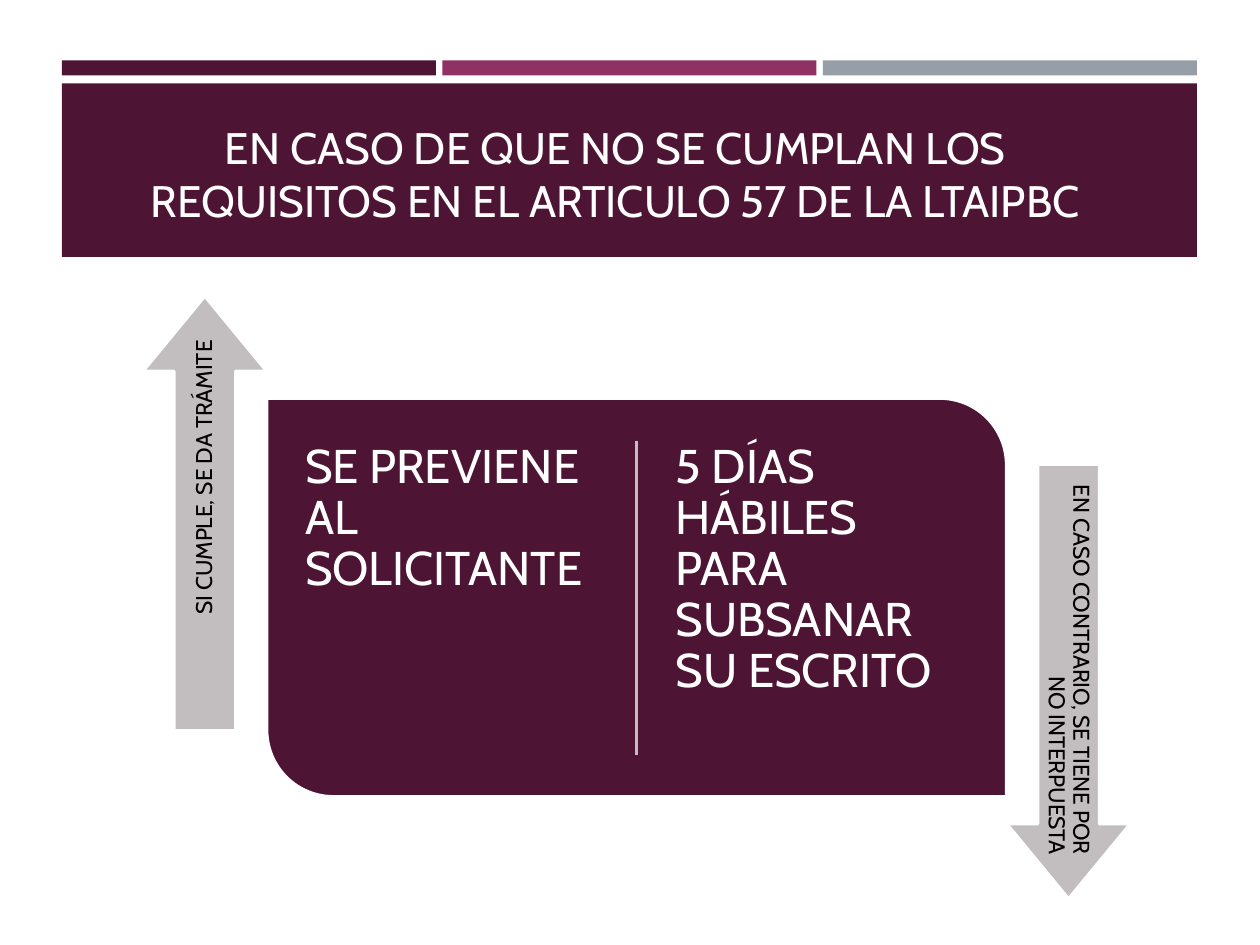
from pptx import Presentation
from pptx.dml.color import RGBColor
from pptx.enum.shapes import MSO_CONNECTOR, MSO_SHAPE
from pptx.enum.text import MSO_ANCHOR, MSO_AUTO_SIZE, PP_ALIGN
from pptx.oxml.ns import qn
from pptx.util import Cm, Pt

COLORS = {
    "plum": "4D1434",
    "magenta": "903163",
    "slate": "969FA7",
    "gray": "C2BDBF",
    "white": "FFFFFF",
    "black": "000000",
}
FONT = "Cabin"


def color(name):
    return RGBColor.from_string(COLORS[name])


def write_text(frame, text, size, ink="white", align=PP_ALIGN.LEFT,
               anchor=MSO_ANCHOR.TOP, inset=0.13, spacing=0.9):
    frame.word_wrap = True
    frame.auto_size = MSO_AUTO_SIZE.NONE
    frame.vertical_anchor = anchor
    frame.margin_left = frame.margin_right = Cm(inset)
    frame.margin_top = frame.margin_bottom = Cm(inset)
    paragraph = frame.paragraphs[0]
    paragraph.alignment = align
    paragraph.line_spacing = spacing
    run = paragraph.add_run()
    run.text = text
    run.font.name = FONT
    run.font.size = Pt(size)
    run.font.color.rgb = color(ink)


def add_block(slide, kind, left, top, width, height, fill, outlined=False):
    block = slide.shapes.add_shape(kind, Cm(left), Cm(top), Cm(width), Cm(height))
    block.shadow.inherit = False
    block.fill.solid()
    block.fill.fore_color.rgb = color(fill)
    if outlined:
        block.line.color.rgb = color("white")
        block.line.width = Pt(1.75)
    else:
        block.line.fill.background()
    return block


def add_label(slide, text, left, top, width, height, **style):
    label = slide.shapes.add_textbox(Cm(left), Cm(top), Cm(width), Cm(height))
    write_text(label.text_frame, text, **style)
    return label


def add_header(slide, heading):
    for column, fill in enumerate(("plum", "magenta", "slate")):
        add_block(slide, MSO_SHAPE.RECTANGLE, 1.25 + 7.67 * column, 1.22, 7.54, 0.3, fill)
    add_block(slide, MSO_SHAPE.RECTANGLE, 1.25, 1.68, 22.88, 3.5, "plum")

    title = slide.shapes.title
    title.left, title.top, title.width, title.height = Cm(2.03), Cm(1.52), Cm(20.75), Cm(3.18)
    write_text(title.text_frame, heading, size=25.2, align=PP_ALIGN.CENTER,
               anchor=MSO_ANCHOR.BOTTOM, spacing=1.0)
    slide.shapes._spTree.append(title._element)  # in front of the band


def add_divider(slide, x, top, bottom):
    divider = slide.shapes.add_connector(MSO_CONNECTOR.STRAIGHT, Cm(x), Cm(top), Cm(x), Cm(bottom))
    divider.line.color.rgb = color("gray")
    divider.line.width = Pt(1.75)
    properties = divider._element.spPr
    properties.append(properties.makeelement(qn("a:effectLst"), {}))


def add_panel(slide, texts):
    panel = add_block(slide, MSO_SHAPE.ROUND_2_DIAG_RECTANGLE, 5.38, 8.03, 14.91, 8.03,
                      "plum", outlined=True)
    panel.adjustments[0], panel.adjustments[1] = 0, 0.167
    add_divider(slide, 12.83, 8.89, 15.21)
    for column, text in enumerate(texts):
        add_label(slide, text, 5.87 + 7.47 * column, 8.64, 6.48, 6.81, size=27, inset=0.28)


def add_outcome_arrow(slide, text, center_x, center_y, upward):
    """Vertical arrow whose label is shifted slightly towards the tail."""
    rotation, shift = (270, 0.38) if upward else (90, -0.38)
    width, height = 8.76, 2.49
    arrow = add_block(slide, MSO_SHAPE.RIGHT_ARROW, center_x - width / 2,
                      center_y - height / 2, width, height, "gray", outlined=True)
    arrow.adjustments[0], arrow.adjustments[1] = 0.498, 0.607
    arrow.rotation = rotation

    width, height = 8, 1.24
    label = add_label(slide, text, center_x - width / 2, center_y + shift - height / 2,
                      width, height, size=13, ink="black", align=PP_ALIGN.RIGHT,
                      anchor=MSO_ANCHOR.MIDDLE)
    label.rotation = rotation


def main():
    deck = Presentation()
    deck.slide_width, deck.slide_height = Cm(25.4), Cm(19.05)
    slide = deck.slides.add_slide(deck.slide_layouts[5])
    add_header(slide, "EN CASO DE QUE NO SE CUMPLAN LOS REQUISITOS EN EL ARTICULO 57 DE LA LTAIPBC")
    add_panel(slide, ("SE PREVIENE AL SOLICITANTE", "5 DÍAS HÁBILES PARA SUBSANAR SU ESCRITO"))
    add_outcome_arrow(slide, "SI CUMPLE, SE DA TRÁMITE", 4.13, 10.35, upward=True)
    add_outcome_arrow(slide, "EN CASO CONTRARIO, SE TIENE POR NO INTERPUESTA", 21.54, 13.74,
                      upward=False)
    deck.save("out.pptx")


if __name__ == "__main__":
    main()
